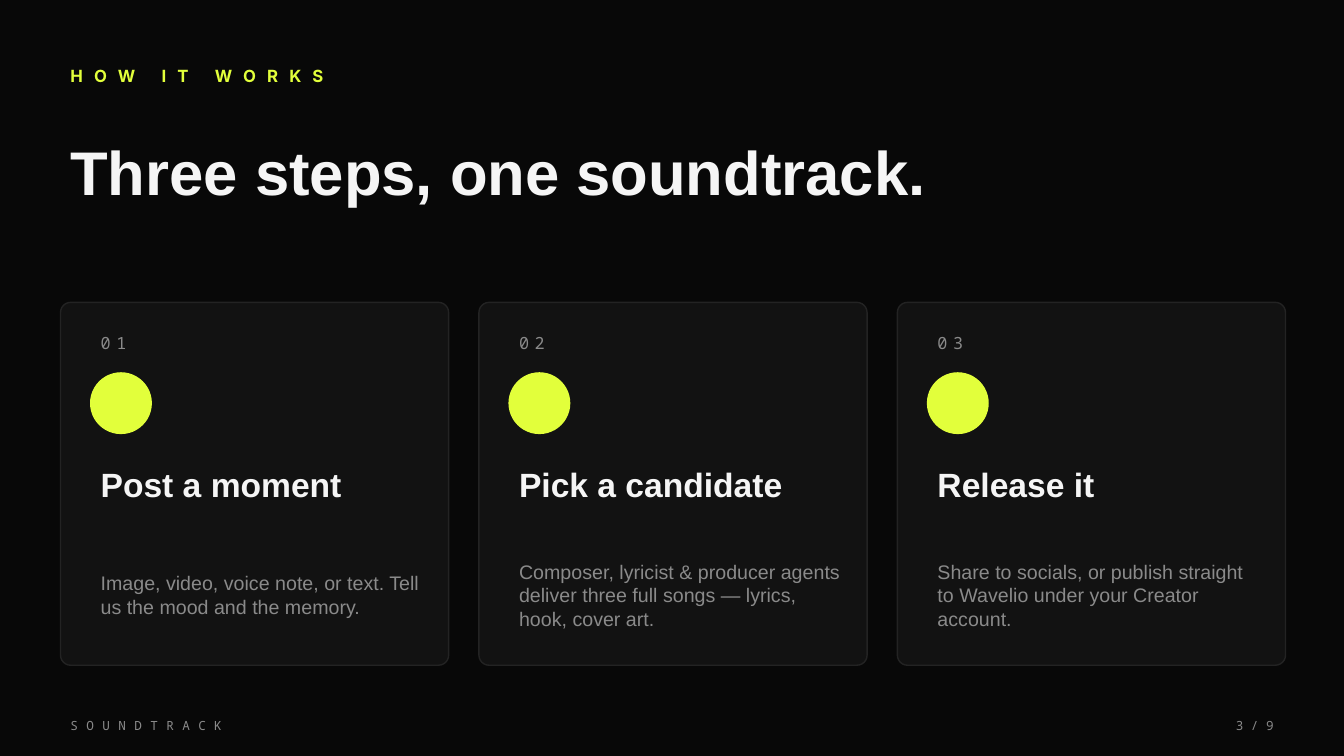
from pptx import Presentation
from pptx.dml.color import RGBColor
from pptx.enum.shapes import MSO_SHAPE
from pptx.enum.text import MSO_ANCHOR, PP_ALIGN
from pptx.util import Inches, Pt

EYEBROW = "HOW IT WORKS"
TITLE = "Three steps, one soundtrack."
STEPS = [
    ("Post a moment",
     "Image, video, voice note, or text. Tell us the mood and the memory."),
    ("Pick a candidate",
     "Composer, lyricist & producer agents deliver three full songs — lyrics, hook, cover art."),
    ("Release it",
     "Share to socials, or publish straight to Wavelio under your Creator account."),
]
FOOTER = "SOUNDTRACK"
PAGE = "3 / 9"

BLACK = RGBColor(0x08, 0x08, 0x08)
CARD = RGBColor(0x12, 0x12, 0x12)
BORDER = RGBColor(0x23, 0x23, 0x23)
LIME = RGBColor(0xE2, 0xFF, 0x3B)
WHITE = RGBColor(0xF5, 0xF5, 0xF5)
GREY = RGBColor(0x8A, 0x8A, 0x8A)

SANS, LABEL, MONO = "Arial", "Inter", "Noto Sans Mono"
ROUNDED, OVAL = MSO_SHAPE.ROUNDED_RECTANGLE, MSO_SHAPE.OVAL
MIDDLE = MSO_ANCHOR.MIDDLE
LEFT, RIGHT = PP_ALIGN.LEFT, PP_ALIGN.RIGHT

MARGIN = 0.6
CARD_TOP, CARD_W, CARD_H = 3, 3.85, 3.6
CARD_GAP, CARD_PAD = 0.3, 0.3
DOT = 0.6


def add_text(slide, text, box, size, font, color, bold=False, spacing=0, align=LEFT):
    """Add one line or paragraph; spacing is the letter spacing in points."""
    tf = slide.shapes.add_textbox(*map(Inches, box)).text_frame
    tf.word_wrap = True
    tf.vertical_anchor = MIDDLE
    p = tf.paragraphs[0]
    p.text = text
    p.alignment = align
    r = p.runs[0]
    r.font.size = Pt(size)
    r.font.name = font
    r.font.bold = bold
    r.font.color.rgb = color
    if spacing:
        r.font._element.set("spc", str(spacing * 100))


def add_filled(slide, kind, box, fill, line):
    sp = slide.shapes.add_shape(kind, *map(Inches, box))
    sp.shadow.inherit = False
    sp.fill.solid()
    sp.fill.fore_color.rgb = fill
    sp.line.color.rgb = line
    sp.line.width = Pt(1)
    return sp


def add_step(slide, index, heading, body):
    left = MARGIN + index * (CARD_W + CARD_GAP)
    inner = left + CARD_PAD
    card = add_filled(slide, ROUNDED, (left, CARD_TOP, CARD_W, CARD_H), CARD, BORDER)
    card.adjustments[0] = 0.028
    add_text(slide, f"{index + 1:02d}", (inner, CARD_TOP + 0.2, 1, 0.4),
             12, MONO, GREY, spacing=4)
    add_filled(slide, OVAL, (inner, CARD_TOP + 0.7, DOT, DOT), LIME, LIME)
    add_text(slide, heading, (inner, CARD_TOP + 1.5, 3.4, 0.6), 24, SANS, WHITE, bold=True)
    add_text(slide, body, (inner, CARD_TOP + 2.2, 3.4, 1.4), 14, SANS, GREY)


def main():
    prs = Presentation()
    prs.slide_width, prs.slide_height = Inches(13.33), Inches(7.5)
    s = prs.slides.add_slide(prs.slide_layouts[6])
    s.background.fill.solid()
    s.background.fill.fore_color.rgb = BLACK

    add_text(s, EYEBROW, (MARGIN, 0.55, 12, 0.4), 12, LABEL, LIME, bold=True, spacing=8)
    add_text(s, TITLE, (MARGIN, 1.2, 12, 1), 44, SANS, WHITE, bold=True)
    for index, (heading, body) in enumerate(STEPS):
        add_step(s, index, heading, body)
    add_text(s, FOOTER, (MARGIN, 7.05, 4, 0.3), 9, MONO, GREY, spacing=6)
    add_text(s, PAGE, (13.33 - MARGIN - 1, 7.05, 1, 0.3), 9, MONO, GREY, align=RIGHT)

    prs.save("out.pptx")


if __name__ == "__main__":
    main()
